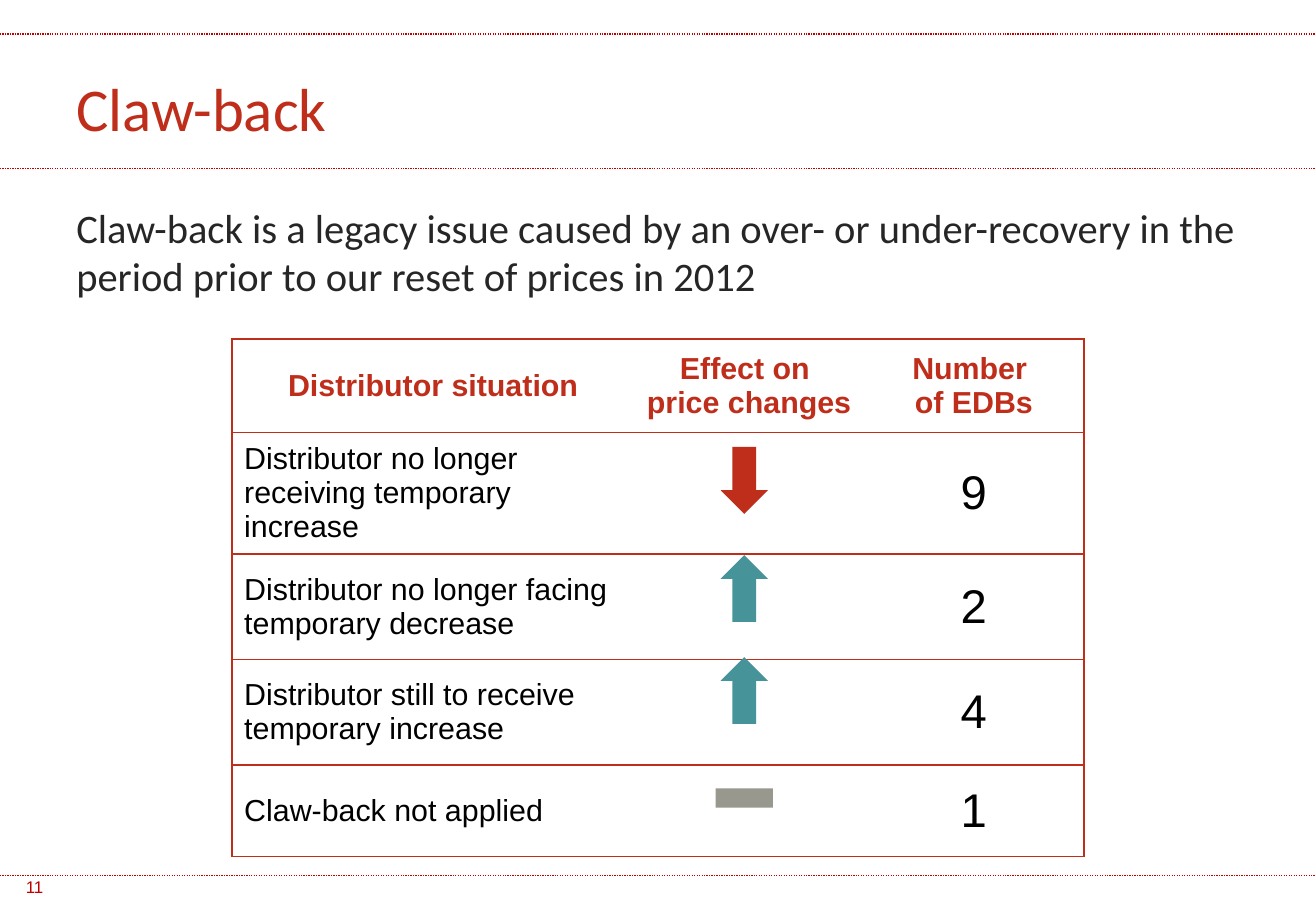
from dataclasses import dataclass

from lxml.etree import SubElement
from pptx import Presentation
from pptx.dml.color import RGBColor
from pptx.enum.dml import MSO_LINE
from pptx.enum.shapes import MSO_CONNECTOR, MSO_SHAPE
from pptx.enum.text import MSO_ANCHOR, PP_ALIGN
from pptx.oxml.ns import qn
from pptx.util import Emu, Pt

PX = 9144
WIDTH, HEIGHT = 1083, 750


@dataclass(frozen=True)
class Theme:
    """Colours, fonts and type sizes of the slide."""
    rule: str = "C00000"
    red: str = "BF2E1A"
    teal: str = "47939A"
    grey: str = "99988E"
    ink: str = "262626"
    black: str = "000000"
    heading_font: str = "Calibri"
    table_font: str = "Arial"
    title: int = 36
    lead: int = 24
    count: int = 28
    label: int = 18
    page: int = 10


def px(*lengths):
    """Turn pixel lengths into EMU."""
    return [Emu(length * PX) for length in lengths]


def write(frame, text, *, font, size, color, bold=False,
          align=PP_ALIGN.LEFT, anchor=MSO_ANCHOR.MIDDLE):
    """Put formatted text in a text frame."""
    frame.word_wrap = True
    frame.vertical_anchor = anchor
    paragraph = frame.paragraphs[0]
    paragraph.text = text
    paragraph.alignment = align
    for run in paragraph.runs:
        run.font.name = font
        run.font.size = Pt(size)
        run.font.bold = bold
        run.font.color.rgb = RGBColor.from_string(color)


class SlideBuilder:
    """Adds styled elements to one slide."""

    def __init__(self, slide, theme):
        """Keep the slide and its theme."""
        self.shapes = slide.shapes
        self.theme = theme

    def rule(self, y):
        """Draw a dotted line across the slide."""
        line = self.shapes.add_connector(MSO_CONNECTOR.STRAIGHT, *px(0, y, WIDTH, y))
        line.line.color.rgb = RGBColor.from_string(self.theme.rule)
        line.line.width = Pt(0.75)
        line.line.dash_style = MSO_LINE.ROUND_DOT
        SubElement(line._element.spPr, qn("a:effectLst"))

    def text(self, box, text, **style):
        """Add a text box."""
        write(self.shapes.add_textbox(*px(*box)).text_frame, text, **style)

    def mark(self, preset, box, color, rotation=0):
        """Add a plain filled shape."""
        shape = self.shapes.add_shape(preset, *px(*box))
        shape.shadow.inherit = False
        shape.rotation = rotation
        shape.fill.solid()
        shape.fill.fore_color.rgb = RGBColor.from_string(color)
        shape.line.fill.background()

    def border(self, cell, sides):
        """Rule the given sides of a cell and clear the others."""
        properties = cell._tc.get_or_add_tcPr()
        for side in "LRTB":
            line = SubElement(properties, qn(f"a:ln{side}"), w=str(Pt(1)))
            if side in sides:
                fill = SubElement(line, qn("a:solidFill"))
                SubElement(fill, qn("a:srgbClr"), val=self.theme.red)
            else:
                SubElement(line, qn("a:noFill"))

    def table(self, left, top, widths, heights, rows):
        """Add a table with a header row and large counts in the last column."""
        theme = self.theme
        last = len(widths) - 1
        table = self.shapes.add_table(
            len(rows), len(widths), *px(left, top, sum(widths), sum(heights))).table
        table.first_row = table.horz_banding = False
        for column, width in zip(table.columns, px(*widths)):
            column.width = width
        for row, height in zip(table.rows, px(*heights)):
            row.height = height
        for r, texts in enumerate(rows):
            for c, text in enumerate(texts):
                cell = table.cell(r, c)
                self.border(cell, "TB" + "L" * (c == 0) + "R" * (c == last))
                cell.fill.background()
                cell.vertical_anchor = MSO_ANCHOR.MIDDLE
                header = r == 0
                write(cell.text_frame, text, font=theme.table_font, bold=header,
                      size=theme.count if c == last and not header else theme.label,
                      color=theme.red if header else theme.black,
                      align=PP_ALIGN.CENTER if header or c else PP_ALIGN.LEFT)


def main():
    """Build the claw-back slide."""
    theme = Theme()
    deck = Presentation()
    deck.slide_width, deck.slide_height = px(WIDTH, HEIGHT)
    page = SlideBuilder(deck.slides.add_slide(deck.slide_layouts[6]), theme)

    for y in (28, 139, 721):
        page.rule(y)
    page.text((53, 63, 780, 50), "Claw-back", font=theme.heading_font,
              size=theme.title, color=theme.red)
    page.text((0, 710, 57, 40), "11", font=theme.table_font, size=theme.page,
              color=theme.rule, align=PP_ALIGN.CENTER)
    page.text((53, 162, 976, 94),
              "Claw-back is a legacy issue caused by an over- or under-recovery "
              "in the period prior to our reset of prices in 2012",
              font=theme.heading_font, size=theme.lead, color=theme.ink,
              anchor=MSO_ANCHOR.TOP)

    page.table(191, 279, (331, 189, 181), (77, 87, 87, 87, 75), (
        ("Distributor situation", "Effect on \vprice changes", "Number \vof EDBs"),
        ("Distributor no longer receiving temporary increase", "", "9"),
        ("Distributor no longer facing temporary decrease", "", "2"),
        ("Distributor still to receive temporary increase", "", "4"),
        ("Claw-back not applied", "", "1"),
    ))

    for y, color, rotation in ((368, theme.red, 0), (457, theme.teal, 180),
                               (541, theme.teal, 180)):
        page.mark(MSO_SHAPE.DOWN_ARROW, (593, y, 39, 55), color, rotation)
    page.mark(MSO_SHAPE.RECTANGLE, (589, 649, 47, 16), theme.grey)

    deck.save("out.pptx")


if __name__ == "__main__":
    main()
